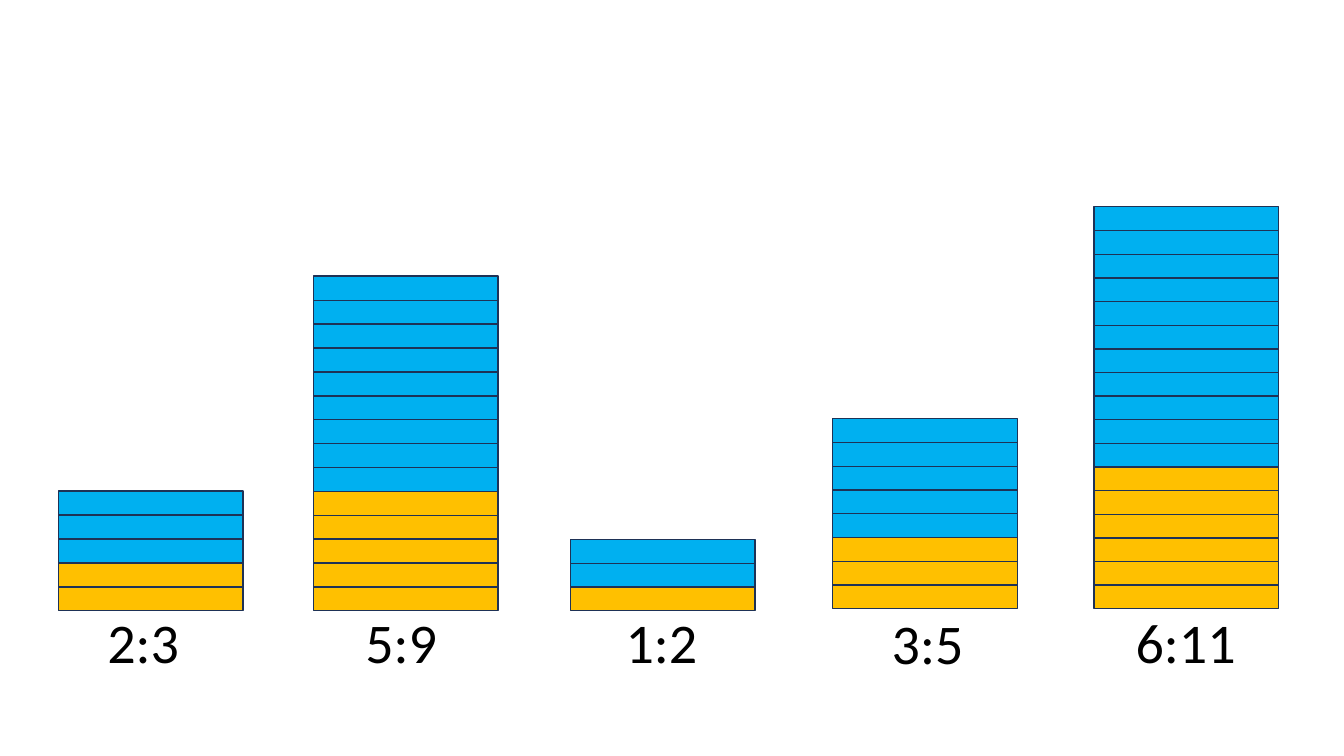
from dataclasses import dataclass

from pptx import Presentation
from pptx.dml.color import RGBColor
from pptx.enum.shapes import MSO_SHAPE
from pptx.enum.text import MSO_AUTO_SIZE, PP_ALIGN
from pptx.util import Inches, Pt

RECTANGLE = MSO_SHAPE.RECTANGLE
CENTER = PP_ALIGN.CENTER
FIT_SHAPE = MSO_AUTO_SIZE.SHAPE_TO_FIT_TEXT


@dataclass(frozen=True)
class Theme:
    font: str = "Calibri"
    label_size: int = 40
    line_width: int = 1
    text: str = "000000"
    first_part: str = "FFC000"
    second_part: str = "00B0F0"
    outline: str = "1E3256"


@dataclass(frozen=True)
class Ratio:
    """One ratio; positions are in grid columns and rows."""
    first: int
    second: int
    tower_col: float
    top_row: float      # top edge of the highest block
    bottom_row: float   # top edge of the lowest block
    label_col: float
    label_row: float = 59.8


class RatioSlide:
    """Draws on a grid of ten columns and ten rows to the inch."""
    CELL = Inches(0.1)
    BLOCK_COLS, BLOCK_ROWS = 18.3, 2.4
    LABEL_COLS, LABEL_ROWS = 13, 7.7

    def __init__(self, slide, theme):
        self.slide = slide
        self.theme = theme

    def grid(self, *lengths):
        return [round(length * self.CELL) for length in lengths]

    def label(self, ratio):
        box = self.slide.shapes.add_textbox(*self.grid(
            ratio.label_col, ratio.label_row, self.LABEL_COLS, self.LABEL_ROWS))
        frame = box.text_frame
        frame.word_wrap = True
        frame.auto_size = FIT_SHAPE
        frame.text = f"{ratio.first}:{ratio.second}"
        paragraph = frame.paragraphs[0]
        paragraph.alignment = CENTER
        font = paragraph.runs[0].font
        font.name = self.theme.font
        font.size = Pt(self.theme.label_size)
        font.color.rgb = RGBColor.from_string(self.theme.text)

    def block(self, tower, col, row, color):
        block = tower.shapes.add_shape(RECTANGLE, *self.grid(
            col, row, self.BLOCK_COLS, self.BLOCK_ROWS))
        block.shadow.inherit = False
        block.fill.solid()
        block.fill.fore_color.rgb = RGBColor.from_string(color)
        block.line.color.rgb = RGBColor.from_string(self.theme.outline)
        block.line.width = Pt(self.theme.line_width)

    def tower(self, ratio):
        tower = self.slide.shapes.add_group_shape()
        colors = ([self.theme.first_part] * ratio.first
                  + [self.theme.second_part] * ratio.second)
        step = (ratio.bottom_row - ratio.top_row) / (len(colors) - 1)
        for level, color in enumerate(colors):
            self.block(tower, ratio.tower_col, ratio.bottom_row - level * step, color)


RATIOS = [
    Ratio(2, 3, 5.8, 48.7, 58.2, 7.7),
    Ratio(5, 9, 31.1, 27.4, 58.2, 33.3),
    Ratio(1, 2, 56.6, 53.5, 58.2, 59.1),
    Ratio(3, 5, 82.6, 41.5, 58, 85.5, 59.9),
    Ratio(6, 11, 108.5, 20.5, 58, 111.1),
]


def main():
    presentation = Presentation()
    presentation.slide_width = Inches(13.33)
    presentation.slide_height = Inches(7.5)
    blank_layout = presentation.slide_layouts[6]
    ratio_slide = RatioSlide(presentation.slides.add_slide(blank_layout), Theme())

    # Ratio labels lie behind the towers
    for ratio in RATIOS:
        ratio_slide.label(ratio)

    # Towers are stacked from the bottom up
    for ratio in RATIOS:
        ratio_slide.tower(ratio)

    presentation.save("out.pptx")


if __name__ == "__main__":
    main()
